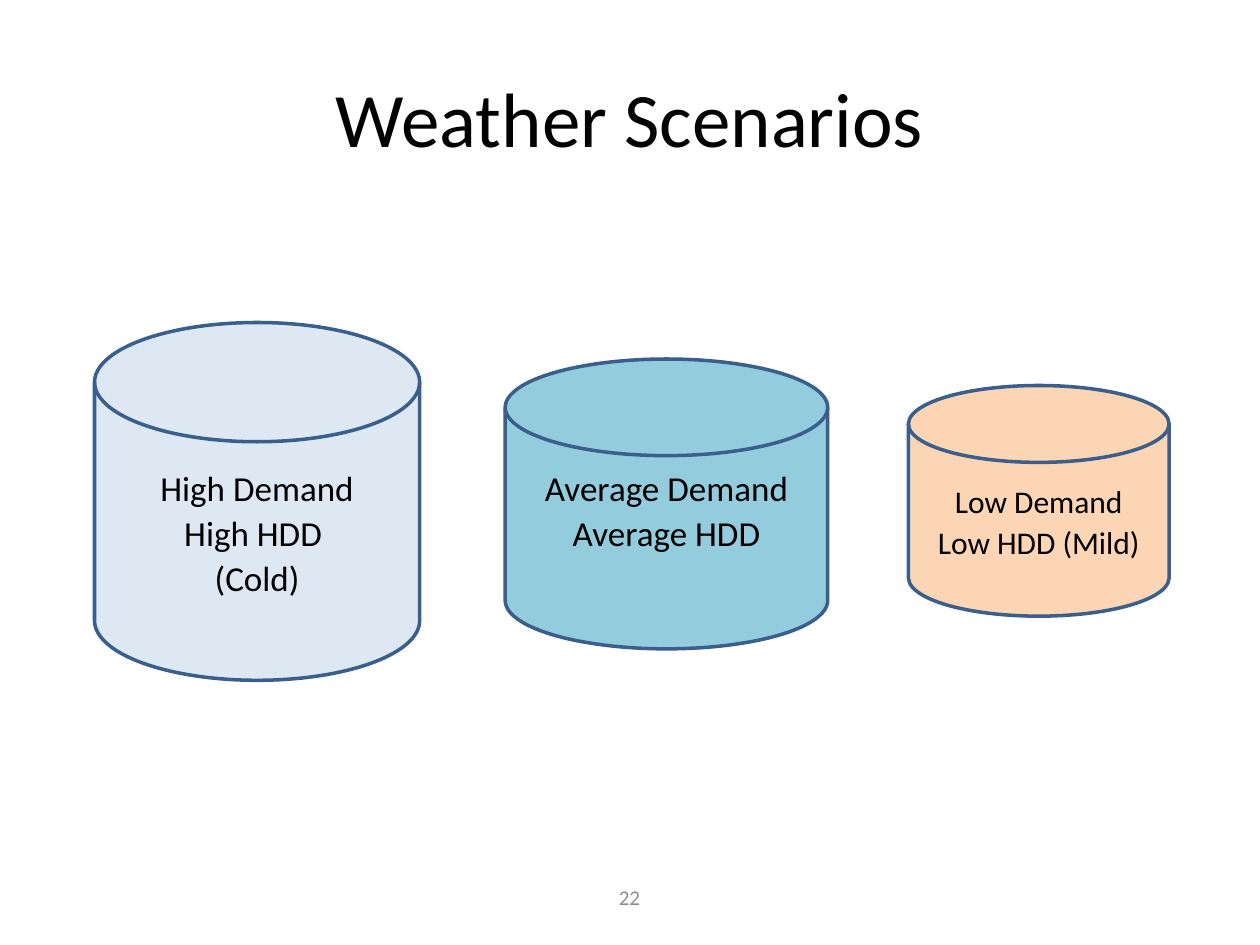
from lxml import etree
from pptx import Presentation
from pptx.dml.color import RGBColor
from pptx.enum import shapes, text
from pptx.oxml import ns
from pptx.util import Pt

LABELS = [
    ("Weather Scenarios", (36, 21.6, 648, 90), 44, "000000"),
    ("22", (275.8, 498.2, 167.8, 28.8), 12, "8C8C8C"),
]
DISKS = [
    ("High Demand\vHigh HDD \v(Cold)", (54, 184.3, 185.8, 204.5), 20, "B9CDE5", 46, 8, 3.6),
    ("Average Demand Average HDD", (288.7, 205.2, 184.3, 165.6), 20, "93CDDD", 100, 8, 26),
    ("Low Demand\vLow HDD (Mild)", (519.1, 220.3, 149, 131.8), 18, "FCD5B5", 100, 0, 3.6),
]
EDGE = "3A5F8C"


def color(code):
    return RGBColor.from_string(code)


def write(shape, words, size, code):
    frame = shape.text_frame
    frame.word_wrap = True
    frame.vertical_anchor = text.MSO_ANCHOR.MIDDLE
    para = frame.paragraphs[0]
    para.text = words
    para.alignment = text.PP_ALIGN.CENTER
    para.font.name = "Calibri"
    para.font.size = Pt(size)
    para.font.color.rgb = color(code)
    return frame, para


def add_disk(slide, words, box, size, code, alpha, after, inset):
    kind = shapes.MSO_SHAPE.FLOWCHART_MAGNETIC_DISK
    disk = slide.shapes.add_shape(kind, *map(Pt, box))
    disk.shadow.inherit = False
    disk.fill.solid()
    disk.fill.fore_color.rgb = color(code)
    if alpha < 100:
        tint = disk.element.spPr.find(ns.qn("a:solidFill"))[0]
        etree.SubElement(tint, ns.qn("a:alpha")).set("val", str(alpha * 1000))
    disk.line.color.rgb = color(EDGE)
    disk.line.width = Pt(2)
    frame, para = write(disk, words, size, "000000")
    frame.margin_bottom = Pt(inset)
    para.line_spacing = 1.07
    para.space_after = Pt(after)


def main():
    deck = Presentation()
    deck.slide_width, deck.slide_height = Pt(720), Pt(540)
    slide = deck.slides.add_slide(deck.slide_layouts[6])
    for words, box, size, code in LABELS:
        write(slide.shapes.add_textbox(*map(Pt, box)), words, size, code)
    for disk in DISKS:
        add_disk(slide, *disk)
    deck.save("out.pptx")


if __name__ == "__main__":
    main()
